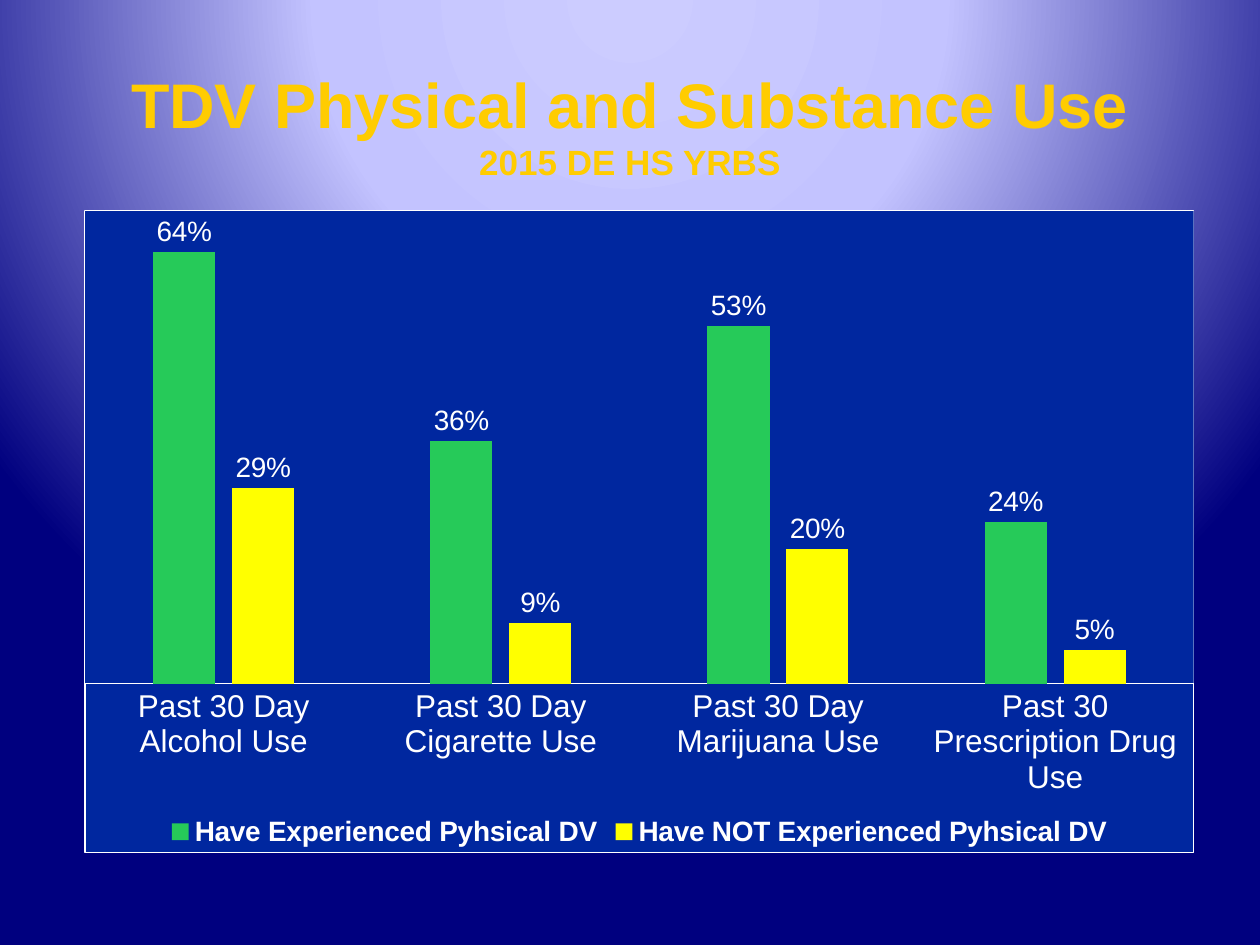
from dataclasses import dataclass

from pptx import Presentation
from pptx.chart.data import CategoryChartData
from pptx.dml.color import RGBColor
from pptx.enum.chart import XL_CHART_TYPE, XL_LABEL_POSITION, XL_LEGEND_POSITION, XL_TICK_MARK
from pptx.enum.text import MSO_ANCHOR, PP_ALIGN
from pptx.oxml import parse_xml
from pptx.oxml.ns import nsdecls, qn
from pptx.util import Inches, Pt

COLUMN_CLUSTERED = XL_CHART_TYPE.COLUMN_CLUSTERED
OUTSIDE_END = XL_LABEL_POSITION.OUTSIDE_END
LEGEND_BOTTOM = XL_LEGEND_POSITION.BOTTOM
NO_TICKS = XL_TICK_MARK.NONE
MIDDLE = MSO_ANCHOR.MIDDLE
CENTER = PP_ALIGN.CENTER

FONT = "Arial"
PERCENT = "0%"
COLORS = {
    "glow": "CCCCFF",
    "lavender": "C3C3FF",
    "navy": "00007F",
    "title": "FFCC00",
    "panel": "00279F",
    "white": "FFFFFF",
    "experienced": "26CA59",
    "not_experienced": "FFFF00",
}


@dataclass
class Series:
    name: str
    values: tuple[float, ...]
    color: str


CATEGORIES = (
    "Past 30 Day Alcohol Use",
    "Past 30 Day Cigarette Use",
    "Past 30 Day Marijuana Use",
    "Past 30 Prescription Drug Use",
)
SERIES = (
    Series("Have Experienced Pyhsical DV", (0.64, 0.36, 0.53, 0.24), "experienced"),
    Series("Have NOT Experienced Pyhsical DV", (0.29, 0.09, 0.20, 0.05), "not_experienced"),
)


def rgb(color: str) -> RGBColor:
    return RGBColor.from_string(COLORS[color])


def style_font(font, size: float, color: str = "white", bold: bool = False) -> None:
    font.name = FONT
    font.size = Pt(size)
    font.bold = bold
    font.color.rgb = rgb(color)


def set_background(slide) -> None:
    """Fill the slide with a circular gradient centred above its top edge."""
    fill = slide.background.fill
    fill.gradient()
    old_gradient = slide.background._cSld.bg.bgPr.find(qn("a:gradFill"))
    stops = "".join(
        f'<a:gs pos="{position * 1000}"><a:srgbClr val="{COLORS[color]}"/></a:gs>'
        for position, color in ((0, "glow"), (40, "lavender"), (100, "navy"))
    )
    gradient = parse_xml(
        f'<a:gradFill {nsdecls("a")} rotWithShape="1"><a:gsLst>{stops}</a:gsLst>'
        '<a:path path="circle">'
        '<a:fillToRect l="50000" t="-80000" r="50000" b="180000"/>'
        "</a:path></a:gradFill>"
    )
    old_gradient.getparent().replace(old_gradient, gradient)


def add_title(slide) -> None:
    box = slide.shapes.add_textbox(Inches(0), Inches(0.38), Inches(10), Inches(1.21))
    frame = box.text_frame
    frame.word_wrap = True
    frame.vertical_anchor = MIDDLE
    paragraph = frame.paragraphs[0]
    paragraph.alignment = CENTER
    heading = paragraph.add_run()
    heading.text = "TDV Physical and Substance Use"
    style_font(heading.font, 36, "title", bold=True)
    paragraph.add_line_break()
    source = paragraph.add_run()
    source.text = "2015 DE HS YRBS"
    style_font(source.font, 20, "title", bold=True)


def chart_panel_properties(has_border: bool):
    """Return the fill and outline of a chart area or plot area."""
    line = f'<a:solidFill><a:srgbClr val="{COLORS["white"]}"/></a:solidFill>' if has_border else "<a:noFill/>"
    return parse_xml(
        f'<c:spPr {nsdecls("c", "a")}>'
        f'<a:solidFill><a:srgbClr val="{COLORS["panel"]}"/></a:solidFill>'
        f'<a:ln w="{Pt(0.75)}">{line}</a:ln></c:spPr>'
    )


def style_chart_panels(chart) -> None:
    """Colour the panels and stretch the plot across the chart's full width."""
    chart_element = chart._chartSpace.find(qn("c:chart"))
    chart_element.addnext(chart_panel_properties(has_border=True))
    plot_area = chart_element.find(qn("c:plotArea"))
    plot_area.append(chart_panel_properties(has_border=False))
    for old_layout in plot_area.findall(qn("c:layout")):
        plot_area.remove(old_layout)
    bounds = "".join(
        f'<c:{tag} val="{value}"/>'
        for tag, value in (("x", 0), ("y", 0), ("w", 1), ("h", 0.737))
    )
    layout = parse_xml(
        f'<c:layout {nsdecls("c")}><c:manualLayout><c:layoutTarget val="inner"/>'
        f'<c:xMode val="edge"/><c:yMode val="edge"/>{bounds}</c:manualLayout></c:layout>'
    )
    plot_area.insert(0, layout)


def style_axes(chart) -> None:
    category_axis = chart.category_axis
    category_axis.major_tick_mark = NO_TICKS
    category_axis.minor_tick_mark = NO_TICKS
    style_font(category_axis.tick_labels.font, 18)
    category_axis.format.line.color.rgb = rgb("white")
    category_axis.format.line.width = Pt(0.75)

    value_axis = chart.value_axis
    value_axis.minimum_scale = 0
    value_axis.maximum_scale = 0.7
    value_axis.has_major_gridlines = False
    value_axis.tick_labels.number_format = PERCENT
    value_axis.tick_labels.number_format_is_linked = False
    value_axis.visible = False


def style_series(chart_series, color: str) -> None:
    chart_series.invert_if_negative = False
    chart_series.format.fill.solid()
    chart_series.format.fill.fore_color.rgb = rgb(color)
    chart_series.format.line.fill.background()
    labels = chart_series.data_labels
    labels.show_value = True
    labels.position = OUTSIDE_END
    labels.number_format = PERCENT
    labels.number_format_is_linked = False
    style_font(labels.font, 16)


def add_substance_use_chart(slide) -> None:
    data = CategoryChartData(number_format=PERCENT)
    data.categories = CATEGORIES
    for series in SERIES:
        data.add_series(series.name, series.values)
    chart = slide.shapes.add_chart(
        COLUMN_CLUSTERED, Inches(0.67), Inches(1.67), Inches(8.81), Inches(5.1), data
    ).chart
    chart.has_title = False
    style_font(chart.font, 10)
    chart.has_legend = True
    chart.legend.position = LEGEND_BOTTOM
    chart.legend.include_in_layout = False
    style_font(chart.legend.font, 16, bold=True)

    plot = chart.plots[0]
    plot.vary_by_categories = False
    plot.gap_width = 219
    plot.overlap = -27
    for chart_series, series in zip(plot.series, SERIES):
        style_series(chart_series, series.color)
    style_axes(chart)
    style_chart_panels(chart)


def main() -> None:
    presentation = Presentation()
    presentation.slide_width = Inches(10)
    presentation.slide_height = Inches(7.5)
    slide = presentation.slides.add_slide(presentation.slide_layouts[6])
    set_background(slide)
    add_title(slide)
    add_substance_use_chart(slide)
    presentation.save("out.pptx")


if __name__ == "__main__":
    main()
